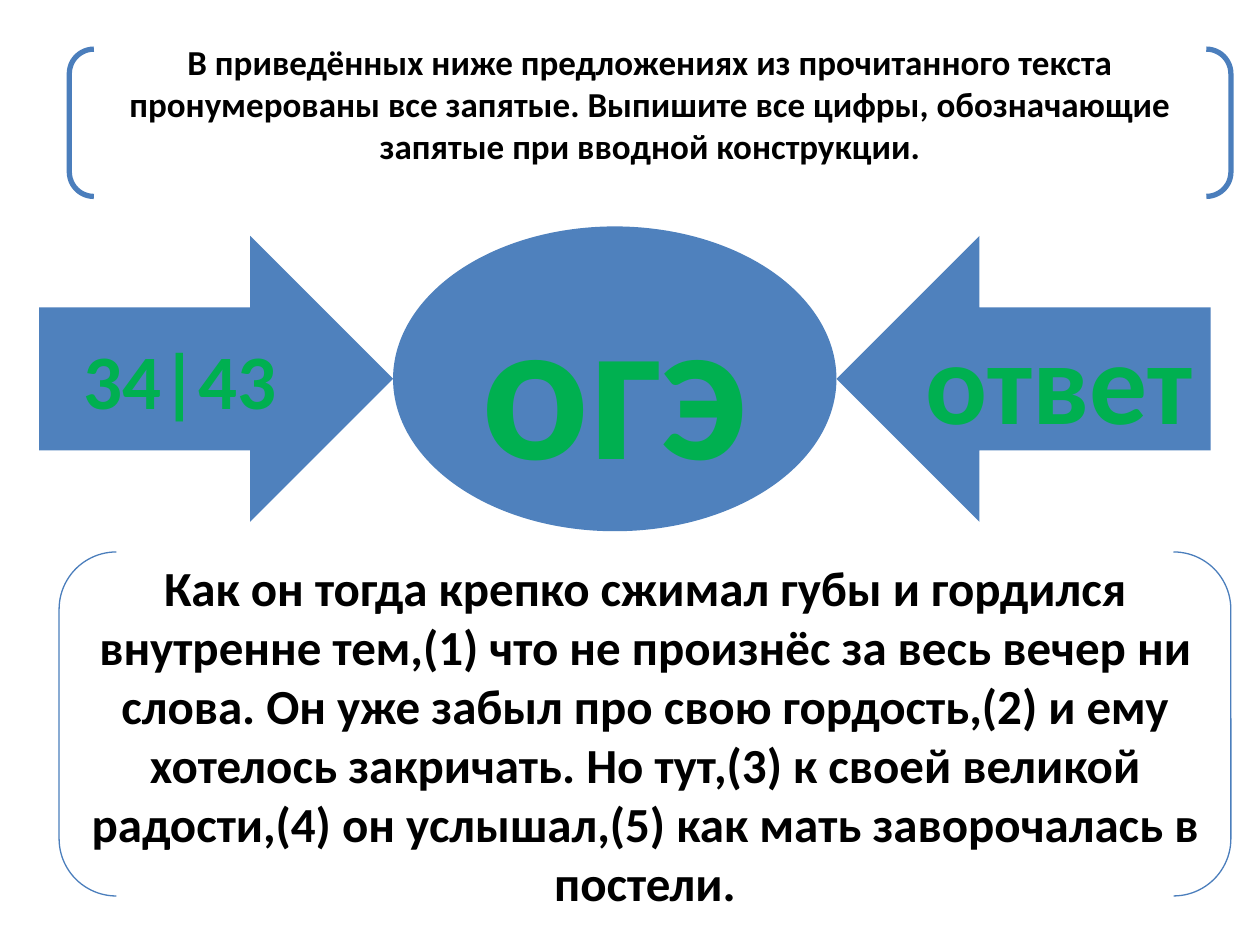
from pptx import Presentation
from pptx.dml.color import RGBColor
from pptx.enum.shapes import MSO_SHAPE
from pptx.enum.text import MSO_ANCHOR, PP_ALIGN
from pptx.util import Pt

BRACKETS = MSO_SHAPE.DOUBLE_BRACKET
RIGHT_ARROW = MSO_SHAPE.RIGHT_ARROW
LEFT_ARROW = MSO_SHAPE.LEFT_ARROW
OVAL = MSO_SHAPE.OVAL
MIDDLE = MSO_ANCHOR.MIDDLE
CENTER = PP_ALIGN.CENTER

THEME = {
    "font": "Calibri",
    "fill": RGBColor(0x4F, 0x81, 0xBD),
    "line": RGBColor(0x4B, 0x7E, 0xBC),
    "ink": RGBColor(0, 0, 0),
    "accent": RGBColor(0x00, 0xB0, 0x50),
    "task": 20, "sentence": 28, "number": 44, "answer": 66, "exam": 115,
}

# Content
TASK = ("В приведённых ниже предложениях из прочитанного текста пронумерованы "
        "все запятые. Выпишите все цифры, обозначающие запятые при вводной "
        "конструкции.")
SENTENCE = ("Как он тогда крепко сжимал губы и гордился внутренне тем,(1) что не "
            "произнёс за весь вечер ни слова. Он уже забыл про свою гордость,(2) "
            "и ему хотелось закричать. Но тут,(3) к своей великой радости,(4) он "
            "услышал,(5) как мать заворочалась в постели.")

# text, type size, (left, top, width, height), line width, (top, bottom) inset
FRAMES = [
    (TASK, "task", (39.6, 28.1, 663.8, 84.2), 3, (0, 22)),
    (SENTENCE, "sentence", (33.8, 315.4, 669.6, 196.6), 0.75, (12, 0)),
]

# text, type size, shape, width, height
ROW = [
    ("34|43", "number", RIGHT_ARROW, 202.3, 163.4),
    ("огэ", "exam", OVAL, 253.4, 174.2),
    ("ответ", "answer", LEFT_ARROW, 213.8, 163.4),
]
ROW_LEFT, ROW_MIDDLE = 22.3, 216.5


def add_text_shape(page, kind, bounds, text, size, color):
    shape = page.shapes.add_shape(kind, *[Pt(value) for value in bounds])
    shape.shadow.inherit = False
    frame = shape.text_frame
    frame.text = text
    frame.word_wrap = True
    frame.vertical_anchor = MIDDLE
    para = frame.paragraphs[0]
    para.alignment = CENTER
    font = para.runs[0].font
    font.name = THEME["font"]
    font.size = Pt(THEME[size])
    font.bold = True
    font.color.rgb = THEME[color]
    return shape


deck = Presentation()
deck.slide_width, deck.slide_height = Pt(720), Pt(540)
page = deck.slides.add_slide(deck.slide_layouts[6])

# Bracketed task and sentence
for text, size, bounds, weight, (inset_top, inset_bottom) in FRAMES:
    shape = add_text_shape(page, BRACKETS, bounds, text, size, "ink")
    shape.fill.background()
    shape.line.color.rgb = THEME["line"]
    shape.line.width = Pt(weight)
    shape.text_frame.margin_top = Pt(inset_top)
    shape.text_frame.margin_bottom = Pt(inset_bottom)

# Arrows meeting at the oval, side by side on one middle line
left = ROW_LEFT
for text, size, kind, width, height in ROW:
    bounds = (left, ROW_MIDDLE - height / 2, width, height)
    shape = add_text_shape(page, kind, bounds, text, size, "accent")
    shape.fill.solid()
    shape.fill.fore_color.rgb = THEME["fill"]
    shape.line.fill.background()
    left += width

deck.save("out.pptx")
